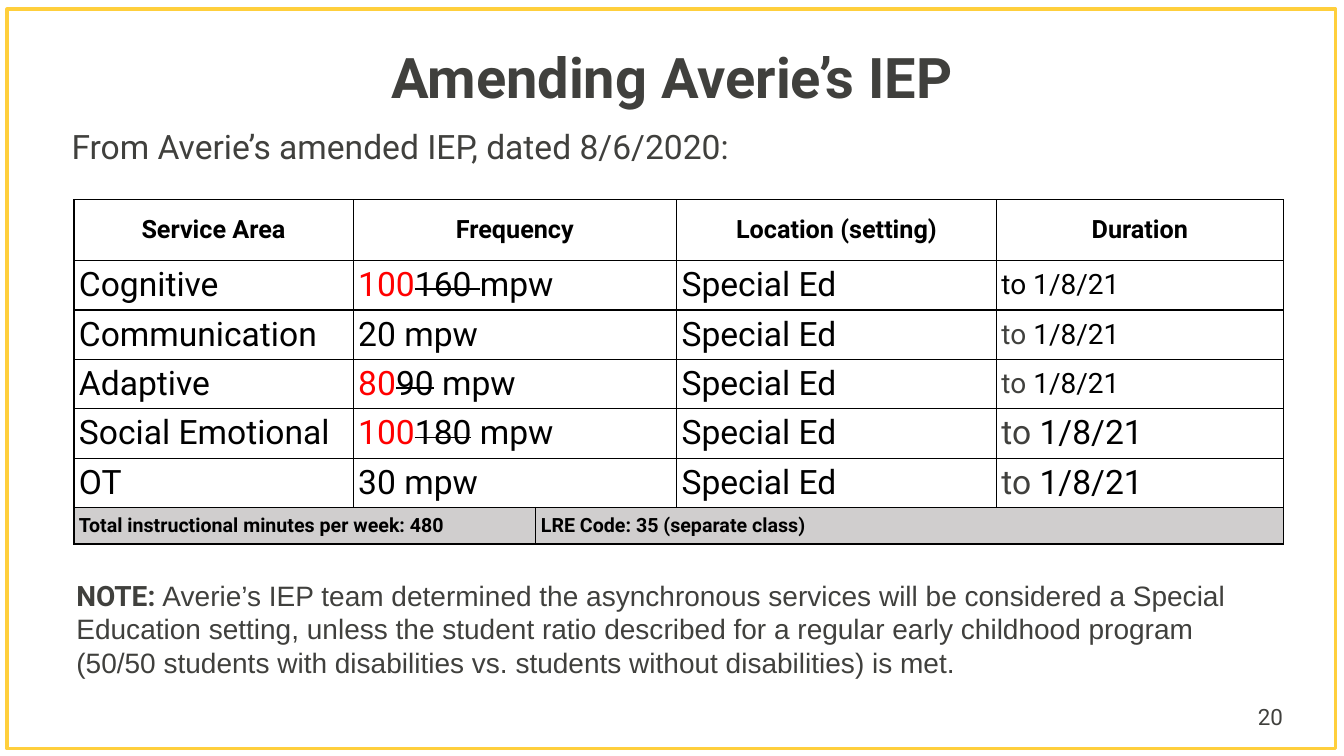
from dataclasses import dataclass

from lxml.etree import SubElement
from pptx import Presentation
from pptx.dml.color import RGBColor
from pptx.enum.shapes import MSO_SHAPE
from pptx.enum.text import MSO_ANCHOR, PP_ALIGN
from pptx.oxml.ns import qn
from pptx.util import Pt


@dataclass(frozen=True)
class Theme:
    text: str = "40403D"
    black: str = "000000"
    changed: str = "FF0000"
    frame: str = "FFCF3C"
    total_fill: str = "D0CECE"
    font: str = "Roboto"
    note_font: str = "Arial"
    title: int = 40
    large: int = 24
    medium: int = 20
    header: int = 18
    number: int = 16
    total: int = 14


THEME = Theme()

TITLE = "Amending Averie’s IEP"
SUBTITLE = "From Averie’s amended IEP, dated 8/6/2020:"
NOTE_LABEL = "NOTE: "
NOTE = (
    "Averie’s IEP team determined the asynchronous services will be considered a Special "
    "Education setting, unless the student ratio described for a regular early childhood "
    "program (50/50 students with disabilities vs. students without disabilities) is met."
)
SLIDE_NUMBER = "20"
HEADERS = ["Service Area", "Frequency", "Location (setting)", "Duration"]
SETTING = "Special Ed"
END_DATE = "1/8/21"
# service area, new minutes, struck minutes, rest, colour of "to", size of the duration
SERVICES = [
    ("Cognitive", "100", "160 ", "mpw", THEME.black, THEME.medium),
    ("Communication", "", "", "20 mpw", THEME.text, THEME.medium),
    ("Adaptive", "80", "90", " mpw", THEME.text, THEME.medium),
    ("Social Emotional", "100", "180", " mpw", THEME.text, THEME.large),
    ("OT", "", "", "30 mpw", THEME.text, THEME.large),
]
TOTALS = ["Total instructional minutes per week: 480", "LRE Code: 35 (separate class)"]

SLIDE_SIZE = (960, 540)
FRAME_BOX = (5, 6.5, 949, 528.5)
TITLE_BOX = (66, 29, 828, 57)
SUBTITLE_BOX = (44, 86, 780, 36)
TABLE_ORIGIN = (52.8, 142.6)
NOTE_BOX = (47.5, 408, 864, 82)
NUMBER_BOX = (891.5, 497, 50, 29)
COLUMN_WIDTHS = [199.5, 130.5, 100.5, 228.5, 205]
ROW_HEIGHTS = [43.5] + [35.3] * len(SERVICES) + [26]
TEXT_COLUMNS = [0, 1, 3, 4]  # the frequency spans columns 1 and 2


def points(box):
    return [Pt(value) for value in box]


def write_runs(paragraph, runs, size, color=THEME.text, bold=False):
    """Add each (text, overrides) pair as a run; empty texts are skipped."""
    for text, overrides in runs:
        if not text:
            continue
        run = paragraph.add_run()
        run.text = text
        font = run.font
        font.size = Pt(size)
        font.name = overrides.get("font", THEME.font)
        font.bold = overrides.get("bold", bold)
        font.color.rgb = RGBColor.from_string(overrides.get("color", color))
        if overrides.get("strike"):
            font._element.set("strike", "sngStrike")


def add_text(slide, box, runs, size):
    text_frame = slide.shapes.add_textbox(*points(box)).text_frame
    text_frame.word_wrap = True
    text_frame.vertical_anchor = MSO_ANCHOR.MIDDLE
    write_runs(text_frame.paragraphs[0], runs, size)


def add_frame(slide):
    frame = slide.shapes.add_shape(MSO_SHAPE.RECTANGLE, *points(FRAME_BOX))
    frame.shadow.inherit = False
    frame.fill.background()
    frame.line.color.rgb = RGBColor.from_string(THEME.frame)
    frame.line.width = Pt(2.25)


def write_title(slide):
    title = slide.shapes.title
    title.left, title.top, title.width, title.height = points(TITLE_BOX)
    title.text_frame.vertical_anchor = MSO_ANCHOR.MIDDLE
    paragraph = title.text_frame.paragraphs[0]
    paragraph.alignment = PP_ALIGN.CENTER
    paragraph.line_spacing = 0.9
    write_runs(paragraph, [(TITLE, {})], THEME.title, bold=True)


def add_borders(cell):
    properties = cell._tc.get_or_add_tcPr()
    for side in ("lnL", "lnR", "lnT", "lnB"):
        line = SubElement(properties, qn(f"a:{side}"), w=str(Pt(1)))
        fill = SubElement(line, qn("a:solidFill"))
        SubElement(fill, qn("a:srgbClr"), val=THEME.black)


def format_cell(cell, fill_color=None):
    cell.margin_left = cell.margin_right = Pt(3.6)
    cell.margin_top = cell.margin_bottom = 0
    cell.vertical_anchor = MSO_ANCHOR.MIDDLE
    add_borders(cell)
    if fill_color:
        cell.fill.solid()
        cell.fill.fore_color.rgb = RGBColor.from_string(fill_color)
    else:
        cell.fill.background()


def write_cell(cell, runs, size, bold=False, alignment=PP_ALIGN.LEFT):
    paragraph = cell.text_frame.paragraphs[0]
    paragraph.alignment = alignment
    write_runs(paragraph, runs, size, THEME.black, bold)


def add_services_table(slide):
    size = (sum(COLUMN_WIDTHS), sum(ROW_HEIGHTS))
    table = slide.shapes.add_table(
        len(ROW_HEIGHTS), len(COLUMN_WIDTHS), *points(TABLE_ORIGIN + size)
    ).table
    table.first_row = table.horz_banding = False
    for column, width in zip(table.columns, COLUMN_WIDTHS):
        column.width = Pt(width)
    for row, height in zip(table.rows, ROW_HEIGHTS):
        row.height = Pt(height)

    total_row = len(ROW_HEIGHTS) - 1
    for row_index, row in enumerate(table.rows):
        for cell in row.cells:
            format_cell(cell, THEME.total_fill if row_index == total_row else None)

    for row_index in range(total_row):
        table.cell(row_index, 1).merge(table.cell(row_index, 2))
    for first, last in ((0, 1), (2, 4)):
        table.cell(total_row, first).merge(table.cell(total_row, last))

    for column, header in zip(TEXT_COLUMNS, HEADERS):
        write_cell(table.cell(0, column), [(header, {})], THEME.header, True, PP_ALIGN.CENTER)
    for row_index, service in enumerate(SERVICES, start=1):
        area, new, struck, rest, to_color, duration_size = service
        frequency = [(new, {"color": THEME.changed}), (struck, {"strike": True}), (rest, {})]
        duration = [("to ", {"color": to_color}), (END_DATE, {})]
        contents = [[(area, {})], frequency, [(SETTING, {})], duration]
        sizes = [THEME.large] * 3 + [duration_size]
        for column, runs, text_size in zip(TEXT_COLUMNS, contents, sizes):
            write_cell(table.cell(row_index, column), runs, text_size)
    for column, total in zip((0, 2), TOTALS):
        write_cell(table.cell(total_row, column), [(total, {})], THEME.total, True)


def main():
    presentation = Presentation()
    presentation.slide_width, presentation.slide_height = points(SLIDE_SIZE)
    slide = presentation.slides.add_slide(presentation.slide_layouts[5])
    add_frame(slide)
    write_title(slide)
    add_text(slide, SUBTITLE_BOX, [(SUBTITLE, {})], THEME.large)
    add_services_table(slide)
    note_runs = [(NOTE_LABEL, {"bold": True}), (NOTE, {"font": THEME.note_font})]
    add_text(slide, NOTE_BOX, note_runs, THEME.medium)
    add_text(slide, NUMBER_BOX, [(SLIDE_NUMBER, {})], THEME.number)
    presentation.save("out.pptx")


if __name__ == "__main__":
    main()
